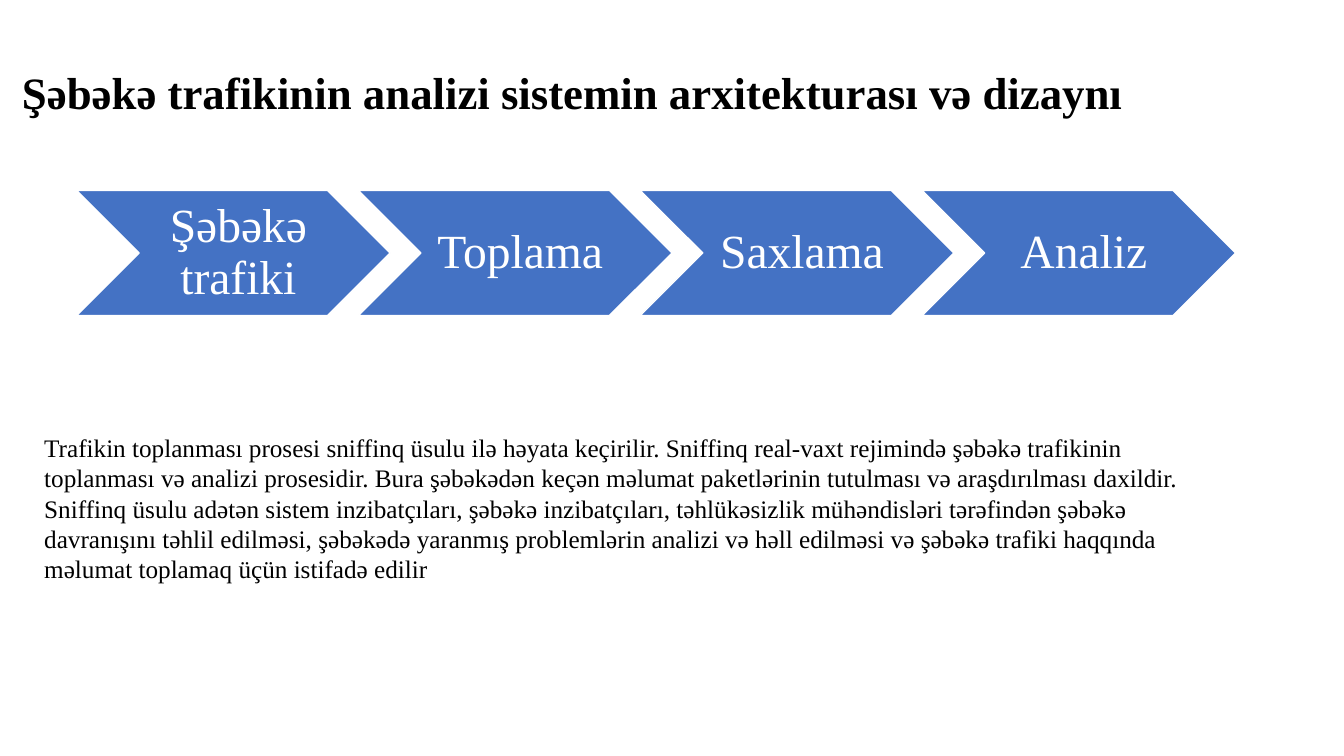
from dataclasses import dataclass

from pptx import Presentation
from pptx.dml.color import RGBColor
from pptx.enum.shapes import MSO_SHAPE as Shape
from pptx.enum.text import MSO_ANCHOR as Anchor, PP_ALIGN as Align
from pptx.slide import Slide
from pptx.text.text import TextFrame
from pptx.util import Inches, Pt


@dataclass(frozen=True)
class Theme:
    font: str = "Times New Roman"
    black: RGBColor = RGBColor(0x00, 0x00, 0x00)
    white: RGBColor = RGBColor(0xFF, 0xFF, 0xFF)
    blue: RGBColor = RGBColor(0x44, 0x72, 0xC4)
    title_size: int = 32
    step_size: int = 34
    body_size: int = 18


@dataclass(frozen=True)
class Box:
    left: float
    top: float
    width: float
    height: float

    def lengths(self) -> list[int]:
        return [Inches(v) for v in (self.left, self.top, self.width, self.height)]


@dataclass(frozen=True)
class TextBlock:
    text: str
    box: Box
    size: int
    bold: bool = False
    anchor: Anchor = Anchor.TOP
    line_spacing: float = 1.0


THEME = Theme()
STEPS = ["Şəbəkə trafiki", "Toplama", "Saxlama", "Analiz"]
FIRST_STEP = Box(0.76, 1.89, 3.11, 1.24)
STEP_PITCH = 2.795

BLOCKS = [
    TextBlock(
        "Şəbəkə trafikinin analizi sistemin arxitekturası və dizaynı",
        Box(0.12, 0.22, 11.5, 1.45),
        THEME.title_size,
        bold=True,
        anchor=Anchor.MIDDLE,
        line_spacing=0.9,
    ),
    TextBlock(
        "Trafikin toplanması prosesi sniffinq üsulu ilə həyata keçirilir. "
        "Sniffinq real-vaxt rejimində şəbəkə trafikinin toplanması və analizi "
        "prosesidir. Bura şəbəkədən keçən məlumat paketlərinin tutulması və "
        "araşdırılması daxildir. Sniffinq üsulu adətən sistem inzibatçıları, "
        "şəbəkə inzibatçıları, təhlükəsizlik mühəndisləri tərəfindən şəbəkə "
        "davranışını təhlil edilməsi, şəbəkədə yaranmış problemlərin analizi "
        "və həll edilməsi və şəbəkə trafiki haqqında məlumat toplamaq üçün "
        "istifadə edilir",
        Box(0.34, 4.24, 11.92, 1.62),
        THEME.body_size,
    ),
]


def write(tf: TextFrame, text: str, size: int, color: RGBColor,
          bold: bool, line_spacing: float, align: Align) -> None:
    tf.word_wrap = True
    tf.text = text
    p = tf.paragraphs[0]
    p.alignment = align
    p.line_spacing = line_spacing
    font = p.runs[0].font
    font.name = THEME.font
    font.size = Pt(size)
    font.bold = bold
    font.color.rgb = color


def add_block(s: Slide, block: TextBlock) -> None:
    tf = s.shapes.add_textbox(*block.box.lengths()).text_frame
    tf.vertical_anchor = block.anchor
    write(tf, block.text, block.size, THEME.black, block.bold,
          block.line_spacing, Align.LEFT)


def add_step(s: Slide, text: str, box: Box) -> None:
    sp = s.shapes.add_shape(Shape.CHEVRON, *box.lengths())
    sp.shadow.inherit = False
    sp.fill.solid()
    sp.fill.fore_color.rgb = THEME.blue
    sp.line.color.rgb = THEME.white
    sp.line.width = Pt(1)
    tf = sp.text_frame
    tf.vertical_anchor = Anchor.MIDDLE
    tf.margin_left = Inches(0.15)
    tf.margin_top = tf.margin_right = tf.margin_bottom = Inches(0.05)
    write(tf, text, THEME.step_size, THEME.white, False, 0.9, Align.CENTER)


def main() -> None:
    prs = Presentation()
    prs.slide_width, prs.slide_height = Inches(13.33), Inches(7.5)
    s = prs.slides.add_slide(prs.slide_layouts[6])
    title, body = BLOCKS
    add_block(s, title)
    for i, text in enumerate(STEPS):
        left = FIRST_STEP.left + i * STEP_PITCH
        add_step(s, text, Box(left, FIRST_STEP.top, FIRST_STEP.width, FIRST_STEP.height))
    add_block(s, body)
    prs.save("out.pptx")


if __name__ == "__main__":
    main()
